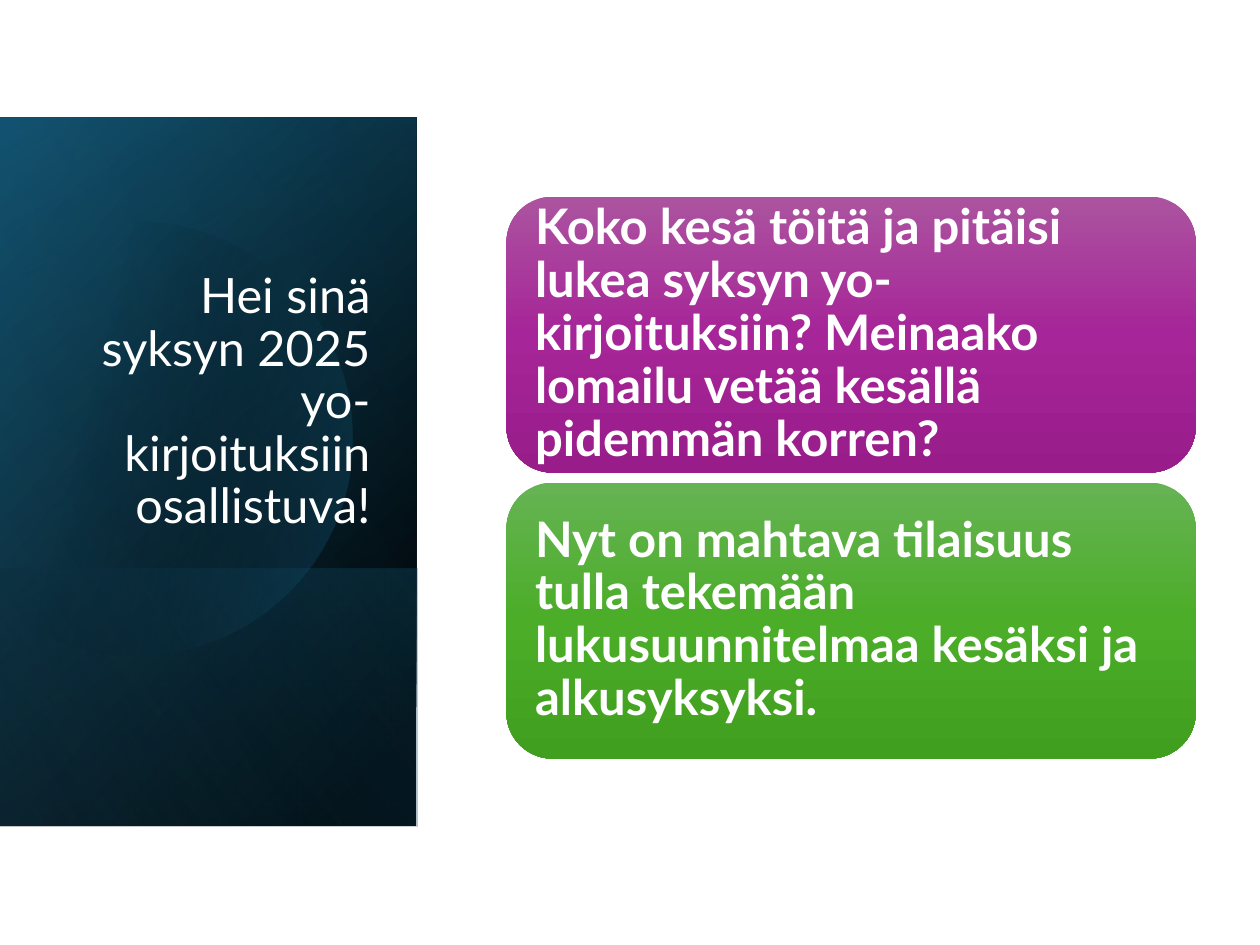
import math
from dataclasses import dataclass

from lxml import etree
from pptx import Presentation
from pptx import util as u
from pptx.dml.color import RGBColor
from pptx.enum import shapes, text
from pptx.oxml import ns


@dataclass(frozen=True)
class Theme:
    font: str = "Lato"
    title_size: float = 27.8
    card_size: float = 28
    ink: str = "FFFFFF"
    black: str = "000000"
    navy: str = "104862"
    teal: str = "156082"
    sky: str = "46B1E1"
    purple: tuple = ("AC53A0", "A62598", "991C8B")
    green: tuple = ("66B354", "4BAD28", "409F1E")


class SlideBuilder:
    def __init__(self, slide, theme):
        self.slide = slide
        self.theme = theme

    def gradient(self, shape, stops, angle):
        """Fill with (position %, colour, opacity %) stops, angle clockwise."""
        shape.shadow.inherit = False
        shape.line.fill.background()
        grad = etree.Element(ns.qn("a:gradFill"), rotWithShape="1")
        stop_list = etree.SubElement(grad, ns.qn("a:gsLst"))
        for position, colour, opacity in stops:
            stop = etree.SubElement(stop_list, ns.qn("a:gs"), pos=str(position * 1000))
            rgb = etree.SubElement(stop, ns.qn("a:srgbClr"), val=colour)
            if opacity < 100:
                etree.SubElement(rgb, ns.qn("a:alpha"), val=str(opacity * 1000))
        etree.SubElement(grad, ns.qn("a:lin"), ang=str(angle * 60000), scaled="0")
        # The fill belongs right before the line
        shape.element.spPr.find(ns.qn("a:ln")).addprevious(grad)

    def panel_layer(self, left, top, width, height, stops, angle):
        """Mirrored rectangle turned a quarter, placed by its unturned frame."""
        layer = self.slide.shapes.add_shape(
            shapes.MSO_SHAPE.RECTANGLE, *map(u.Inches, (left, top, width, height)))
        layer.rotation = 90
        layer.element.spPr.find(ns.qn("a:xfrm")).set("flipH", "1")
        self.gradient(layer, stops, angle)

    def clipped_disc(self, centre_x, centre_y, radius, stops, angle):
        """Disc cut off at the left edge of the slide."""
        reach = math.acos(-centre_x / radius)
        steps = 90
        turns = [reach * (2 * i / steps - 1) for i in range(steps + 1)]
        rim = [(u.Inches(centre_x + radius * math.cos(turn)),
                u.Inches(centre_y + radius * math.sin(turn))) for turn in turns]
        outline = self.slide.shapes.build_freeform(*rim[0])
        outline.add_line_segments(rim[1:], close=True)
        self.gradient(outline.convert_to_shape(), stops, angle)

    def set_words(self, frame, words, size, align, anchor, bold=False):
        frame.word_wrap = True
        frame.vertical_anchor = anchor
        paragraph = frame.paragraphs[0]
        paragraph.text = words
        paragraph.alignment = align
        paragraph.line_spacing = 0.9
        font = paragraph.font
        font.name = self.theme.font
        font.size = u.Pt(size)
        font.bold = bold
        font.color.rgb = RGBColor.from_string(self.theme.ink)

    def title(self, left, top, width, height, words):
        box = self.slide.shapes.add_textbox(*map(u.Inches, (left, top, width, height)))
        self.set_words(box.text_frame, words, self.theme.title_size,
                       text.PP_ALIGN.RIGHT, text.MSO_ANCHOR.BOTTOM)

    def card(self, left, top, width, height, words, colours):
        card = self.slide.shapes.add_shape(
            shapes.MSO_SHAPE.ROUNDED_RECTANGLE,
            *map(u.Inches, (left, top, width, height)))
        self.gradient(card, [(i * 50, c, 100) for i, c in enumerate(colours)], 90)
        frame = card.text_frame
        frame.margin_left = frame.margin_right = u.Inches(0.12)
        frame.margin_top = frame.margin_bottom = u.Inches(0.12)
        self.set_words(frame, words, self.theme.card_size,
                       text.PP_ALIGN.LEFT, text.MSO_ANCHOR.MIDDLE, bold=True)


def main():
    theme = Theme()
    deck = Presentation()
    deck.slide_width, deck.slide_height = u.Inches(10), u.Inches(7.5)
    builder = SlideBuilder(deck.slides.add_slide(deck.slide_layouts[6]), theme)

    # Dark side panel, built from stacked gradients
    panel = (-1.16, 2.09, 5.62, 3.31)
    builder.panel_layer(*panel, [(8, theme.black, 100), (100, theme.navy, 100)], 50)
    builder.panel_layer(*panel, [(0, theme.black, 0), (99, theme.teal, 46)], 30)
    builder.panel_layer(0.63, 3.88, 2.05, 3.31,
                        [(2, theme.teal, 29), (100, theme.black, 30)], 130)
    builder.clipped_disc(1.08, 3.48, 1.72,
                         [(29, theme.black, 0), (100, theme.teal, 43)], 14)
    builder.panel_layer(*panel, [(0, theme.black, 0), (99, theme.sky, 11)], 120)

    # Greeting on the panel
    builder.title(0.48, 2.32, 2.56, 1.97,
                  "Hei sinä syksyn 2025 yo-kirjoituksiin osallistuva!")

    # Message cards
    messages = [
        ("Koko kesä töitä ja pitäisi lukea syksyn yo-kirjoituksiin? Meinaako "
         "lomailu vetää kesällä pidemmän korren?", theme.purple),
        ("Nyt on mahtava tilaisuus tulla tekemään lukusuunnitelmaa "
         "kesäksi ja alkusyksyksi.", theme.green),
    ]
    for row, (words, colours) in enumerate(messages):
        builder.card(4.02, 1.56 + row * 2.27, 5.47, 2.19, words, colours)

    deck.save("out.pptx")


if __name__ == "__main__":
    main()
